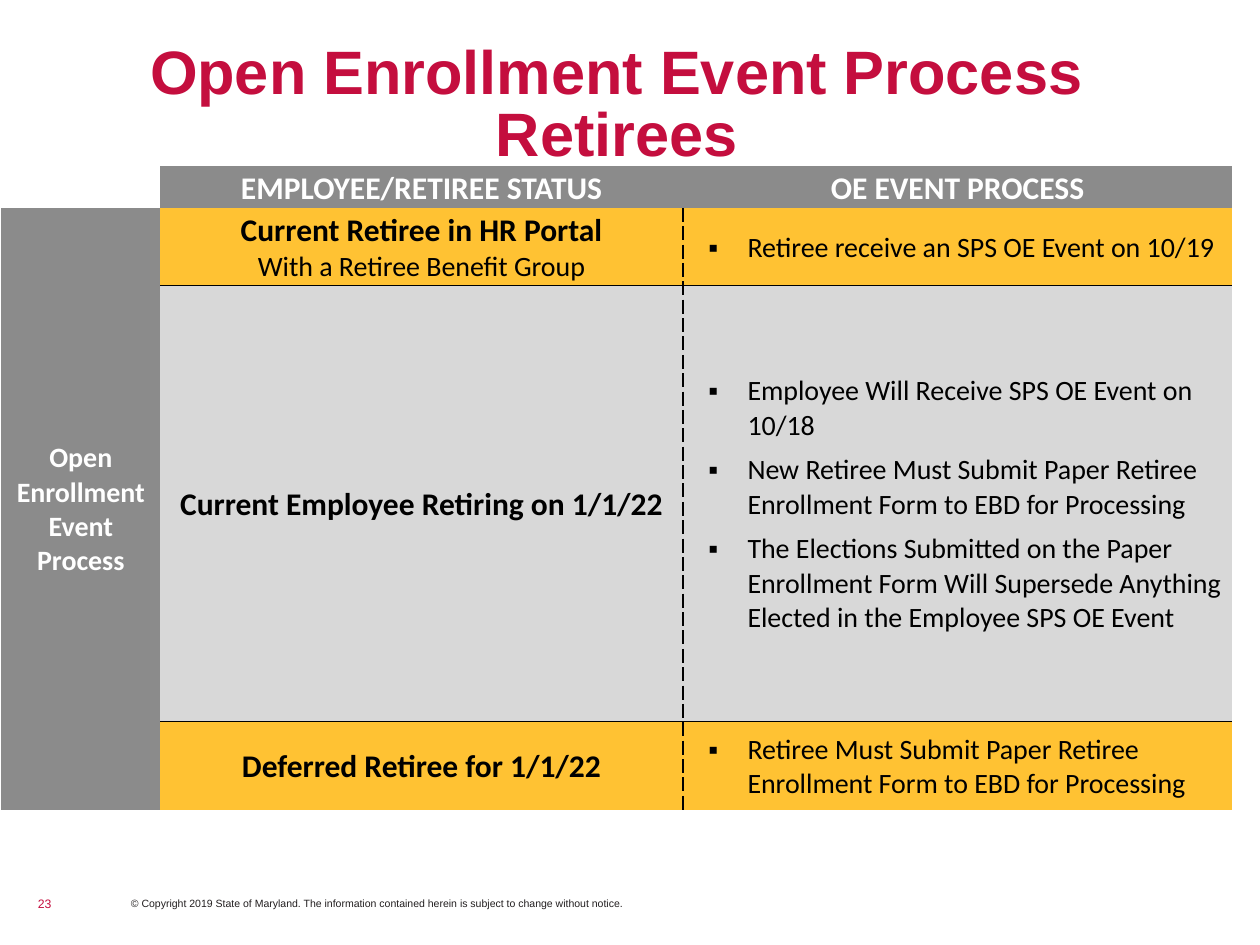
from lxml import etree
from pptx import Presentation
from pptx.dml.color import RGBColor
from pptx.enum.text import MSO_ANCHOR as Anchor, PP_ALIGN as Align
from pptx.oxml.ns import qn
from pptx.util import Cm, Pt

COLORS = {"red": "C40E3E", "ink": "231F20", "black": "000000", "white": "FFFFFF",
          "header": "8B8B8B", "gold": "FFC233", "silver": "D8D8D8"}
TITLE = "Open Enrollment Event Process Retirees"
FOOTERS = [
    ("23", (0.74, 18.06, 0.3, 0.3), Align.RIGHT, 7, "red"),
    ("© Copyright 2019 State of Maryland. The information contained herein is "
     "subject to change without notice.", (2.64, 18.08, 10.06, 0.25), Align.LEFT, 6, "ink"),
]
HEADINGS = ["EMPLOYEE/RETIREE STATUS", "OE EVENT PROCESS"]
ROW_LABEL = "Open Enrollment Event Process"
ROWS = [
    ("Current Retiree in HR Portal", "With a Retiree Benefit Group",
     ["Retiree receive an SPS OE Event on 10/19"], "gold"),
    ("Current Employee Retiring on 1/1/22", "",
     ["Employee Will Receive SPS OE Event on 10/18",
      "New Retiree Must Submit Paper Retiree Enrollment Form to EBD for Processing",
      "The Elections Submitted on the Paper Enrollment Form Will Supersede Anything "
      "Elected in the Employee SPS OE Event"], "silver"),
    ("Deferred Retiree for 1/1/22", "",
     ["Retiree Must Submit Paper Retiree Enrollment Form to EBD for Processing"], "gold"),
]
COLUMN_WIDTHS = [3.2, 10.54, 11.07]
ROW_HEIGHTS = [0.84, 1.57, 8.79, 1.78]
TABLE_LEFT, TABLE_TOP = 0.03, 3.35
NO_STYLE = "{2D5ABB26-0587-4C30-8999-92F81FD0307C}"


def apply(target, **values):
    for name, value in values.items():
        setattr(target, name, value)


def add_run(paragraph, text, size, color, bold=False, font="Calibri"):
    run = paragraph.add_run()
    run.text = text
    apply(run.font, name=font, size=Pt(size), bold=bold)
    run.font.color.rgb = RGBColor.from_string(COLORS[color])


def clear_insets(frame):
    apply(frame, margin_left=0, margin_right=0, margin_top=0, margin_bottom=0)


def format_cell(cell, fill=None, anchor=Anchor.MIDDLE):
    apply(cell, margin_left=Cm(0.03), margin_right=Cm(0.03), margin_top=Cm(0.03),
          margin_bottom=0, vertical_anchor=anchor)
    if fill:
        cell.fill.solid()
        cell.fill.fore_color.rgb = RGBColor.from_string(COLORS[fill])


def add_centered(cell, text, size, color):
    paragraph = cell.text_frame.paragraphs[0]
    paragraph.alignment = Align.CENTER
    add_run(paragraph, text, size, color, bold=True)
    return paragraph


def add_bullets(cell, items):
    for index, item in enumerate(items):
        frame = cell.text_frame
        paragraph = frame.add_paragraph() if index else frame.paragraphs[0]
        properties = paragraph._p.get_or_add_pPr()
        properties.set("marL", str(Cm(1.27)))
        properties.set("indent", str(-Cm(0.79)))
        if len(items) > 1:
            paragraph.space_after = Pt(6)
        color = etree.SubElement(properties, qn("a:buClr"))
        etree.SubElement(color, qn("a:srgbClr"), val=COLORS["black"])
        etree.SubElement(properties, qn("a:buFont"), typeface="Arial")
        etree.SubElement(properties, qn("a:buChar"), char="▪")
        add_run(paragraph, item, 16, "black")


def add_borders(cell, sides):
    properties = cell._tc.get_or_add_tcPr()
    for index, (side, dash) in enumerate(sides):
        line = etree.Element(qn(f"a:ln{side}"), w=str(Pt(1)))
        fill = etree.SubElement(line, qn("a:solidFill"))
        etree.SubElement(fill, qn("a:srgbClr"), val=COLORS["black"])
        etree.SubElement(line, qn("a:prstDash"), val=dash)
        properties.insert(index, line)


def add_title(slide):
    title = slide.shapes.title
    apply(title, left=Cm(0.74), top=Cm(0.89), width=Cm(23.39), height=Cm(1.32))
    frame = title.text_frame
    clear_insets(frame)
    apply(frame, word_wrap=True, vertical_anchor=Anchor.TOP)
    apply(frame.paragraphs[0], alignment=Align.CENTER, line_spacing=0.85)
    add_run(frame.paragraphs[0], TITLE, 35, "red", bold=True, font="Arial")


def add_footers(slide):
    for text, place, alignment, size, color in FOOTERS:
        frame = slide.shapes.add_textbox(*map(Cm, place)).text_frame
        clear_insets(frame)
        apply(frame, word_wrap=False, vertical_anchor=Anchor.MIDDLE)
        frame.paragraphs[0].alignment = alignment
        add_run(frame.paragraphs[0], text, size, color, font="Arial")


def add_process_table(slide):
    frame = slide.shapes.add_table(
        len(ROW_HEIGHTS), len(COLUMN_WIDTHS), Cm(TABLE_LEFT), Cm(TABLE_TOP),
        Cm(sum(COLUMN_WIDTHS)), Cm(sum(ROW_HEIGHTS)))
    table = frame.table
    apply(table, first_row=False, horz_banding=False)
    table._tbl.tblPr.find(qn("a:tableStyleId")).text = NO_STYLE
    for column, width in zip(table.columns, COLUMN_WIDTHS):
        column.width = Cm(width)
    for row, height in zip(table.rows, ROW_HEIGHTS):
        row.height = Cm(height)

    format_cell(table.cell(0, 0))
    for column, heading in enumerate(HEADINGS, 1):
        cell = table.cell(0, column)
        format_cell(cell, "header", Anchor.BOTTOM)
        add_centered(cell, heading, 18, "white")

    label = table.cell(1, 0)
    label.merge(table.cell(len(ROWS), 0))
    format_cell(label, "header")
    add_centered(label, ROW_LABEL, 16, "white")

    for row, (status, detail, steps, fill) in enumerate(ROWS, 1):
        status_cell, steps_cell = table.cell(row, 1), table.cell(row, 2)
        rules = [("T", "solid")] * (row > 1) + [("B", "solid")] * (row < len(ROWS))
        for cell, side in ((status_cell, "R"), (steps_cell, "L")):
            format_cell(cell, fill)
            add_borders(cell, [(side, "dash")] + rules)
        paragraph = add_centered(status_cell, status, 18, "black")
        if detail:
            paragraph.add_line_break()
            add_run(paragraph, detail, 16, "black")
        add_bullets(steps_cell, steps)


def main():
    presentation = Presentation()
    apply(presentation, slide_width=Cm(25.4), slide_height=Cm(19.05))
    slide = presentation.slides.add_slide(presentation.slide_layouts[5])
    add_title(slide)
    add_footers(slide)
    add_process_table(slide)
    presentation.save("out.pptx")


if __name__ == "__main__":
    main()
